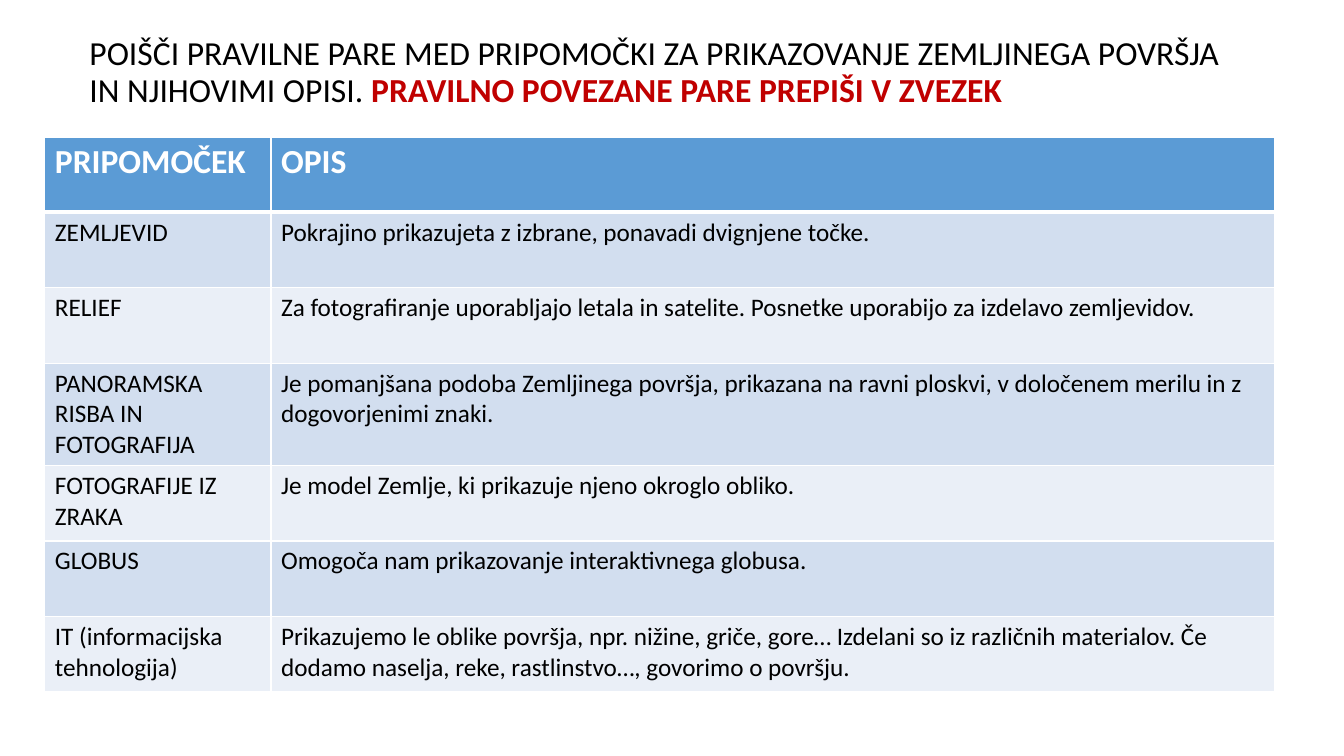
"""Build a slide asking pupils to match geographic aids with their descriptions."""
import dataclasses

import lxml.etree
import pptx
import pptx.dml.color
import pptx.enum.text
import pptx.oxml.ns
import pptx.util


@dataclasses.dataclass(frozen=True)
class Theme:
    """Colours, font and type sizes of the slide."""
    font: str = "Calibri"
    heading_size: int = 24
    body_size: int = 18
    text: str = "000000"
    accent: str = "C00000"
    light: str = "FFFFFF"
    header_fill: str = "5B9BD5"
    band_fills: tuple = ("D2DEEF", "EAEFF7")


class SlideBuilder:
    """Hold the theme and the current slide and draw its elements."""

    def __init__(self, presentation, theme):
        self.theme = theme
        self.slide = presentation.slides.add_slide(presentation.slide_layouts[5])

    def format_run(self, run, size, color, bold=False):
        """Apply the theme font with the given size, colour and weight."""
        run.font.name = self.theme.font
        run.font.size = pptx.util.Pt(size)
        run.font.bold = bold
        run.font.color.rgb = pptx.dml.color.RGBColor.from_string(color)

    def add_title(self, plain, emphasis, left, top, width, height):
        """Fill the title placeholder with plain and emphasised text."""
        title = self.slide.shapes.title
        title.left, title.top = pptx.util.Cm(left), pptx.util.Cm(top)
        title.width, title.height = pptx.util.Cm(width), pptx.util.Cm(height)
        frame = title.text_frame
        frame.word_wrap = True
        frame.auto_size = pptx.enum.text.MSO_AUTO_SIZE.NONE
        frame.vertical_anchor = pptx.enum.text.MSO_ANCHOR.MIDDLE
        frame.text = plain
        paragraph = frame.paragraphs[0]
        paragraph.alignment = pptx.enum.text.PP_ALIGN.LEFT
        paragraph.line_spacing = 0.9
        emphasis_run = paragraph.add_run()
        emphasis_run.text = emphasis
        size = self.theme.heading_size
        self.format_run(paragraph.runs[0], size, self.theme.text)
        self.format_run(emphasis_run, size, self.theme.accent, bold=True)

    def add_borders(self, cell, top, bottom):
        """Give a cell light borders with the given top and bottom points."""
        properties = cell._tc.get_or_add_tcPr()
        widths = {"a:lnL": 1, "a:lnR": 1, "a:lnT": top, "a:lnB": bottom}
        for tag, points in widths.items():
            line = lxml.etree.SubElement(properties, pptx.oxml.ns.qn(tag), w=str(pptx.util.Pt(points)))
            fill = lxml.etree.SubElement(line, pptx.oxml.ns.qn("a:solidFill"))
            lxml.etree.SubElement(fill, pptx.oxml.ns.qn("a:srgbClr"), val=self.theme.light)

    def format_cell(self, cell, row_index):
        """Style a cell as part of the header or of a banded row."""
        theme = self.theme
        header = row_index == 0
        self.add_borders(cell, 3 if row_index == 1 else 1, 3 if header else 1)
        fill = theme.header_fill if header else theme.band_fills[(row_index - 1) % 2]
        cell.fill.solid()
        cell.fill.fore_color.rgb = pptx.dml.color.RGBColor.from_string(fill)
        size = theme.heading_size if header else theme.body_size
        color = theme.light if header else theme.text
        for run in cell.text_frame.paragraphs[0].runs:
            self.format_run(run, size, color, bold=header)

    def add_table(self, rows, left, top, column_widths, row_heights):
        """Add a table with a header row and banded body rows."""
        table = self.slide.shapes.add_table(
            len(rows), len(column_widths), pptx.util.Cm(left), pptx.util.Cm(top),
            pptx.util.Cm(sum(column_widths)), pptx.util.Cm(sum(row_heights))).table
        for column, width in zip(table.columns, column_widths):
            column.width = pptx.util.Cm(width)
        for row_index, (texts, height) in enumerate(zip(rows, row_heights)):
            table.rows[row_index].height = pptx.util.Cm(height)
            for cell, text in zip(table.rows[row_index].cells, texts):
                cell.text_frame.text = text
                self.format_cell(cell, row_index)


AIDS = [
    ("PRIPOMOČEK", "OPIS"),
    ("ZEMLJEVID", "Pokrajino prikazujeta z izbrane, ponavadi dvignjene točke."),
    ("RELIEF", "Za fotografiranje uporabljajo letala in satelite. "
               "Posnetke uporabijo za izdelavo zemljevidov."),
    ("PANORAMSKA RISBA IN FOTOGRAFIJA",
     "Je pomanjšana podoba Zemljinega površja, prikazana na ravni ploskvi, "
     "v določenem merilu in z dogovorjenimi znaki."),
    ("FOTOGRAFIJE IZ ZRAKA", "Je model Zemlje, ki prikazuje njeno okroglo obliko."),
    ("GLOBUS", "Omogoča nam prikazovanje interaktivnega globusa."),
    ("IT (informacijska tehnologija)",
     "Prikazujemo le oblike površja, npr. nižine, griče, gore… Izdelani so iz različnih "
     "materialov. Če dodamo naselja, reke, rastlinstvo…, govorimo o površju."),
]


def main():
    """Create and save the presentation."""
    presentation = pptx.Presentation()
    presentation.slide_width = pptx.util.Cm(33.87)
    presentation.slide_height = pptx.util.Cm(19.05)
    builder = SlideBuilder(presentation, Theme())
    builder.add_title(
        "POIŠČI PRAVILNE PARE MED PRIPOMOČKI ZA PRIKAZOVANJE ZEMLJINEGA POVRŠJA IN NJIHOVIMI OPISI. ",
        "PRAVILNO POVEZANE PARE PREPIŠI V ZVEZEK", 2, 0, 29.21, 3.68)
    row_heights = [1.9] * len(AIDS)
    row_heights[3] = 2.54
    builder.add_table(AIDS, 1.13, 3.45, [5.7, 25.3], row_heights)
    presentation.save("out.pptx")


if __name__ == "__main__":
    main()
